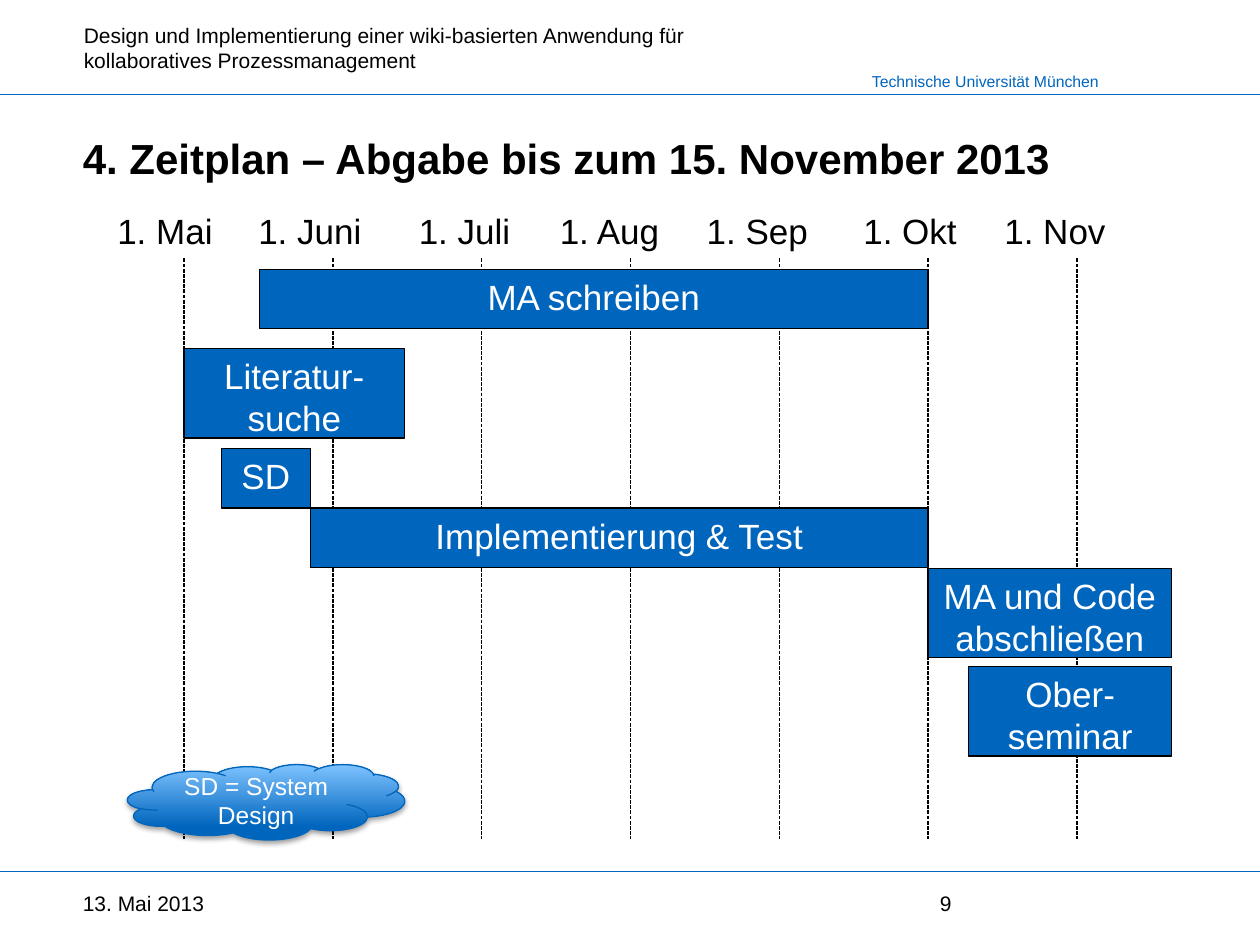
from lxml.etree import SubElement
from pptx import Presentation
from pptx.dml.color import RGBColor
from pptx.enum.dml import MSO_LINE
from pptx.enum.shapes import MSO_CONNECTOR as Connector, MSO_SHAPE as Shape
from pptx.enum.text import MSO_ANCHOR as Anchor, PP_ALIGN as Align
from pptx.oxml.ns import qn
from pptx.util import Cm, Pt

COLORS = {"blue": "0065BD", "light": "7FC3FF", "black": "000000", "white": "FFFFFF"}


def rgb(name):
    return RGBColor.from_string(COLORS[name])


class SlideBuilder:
    font_name = "Arial"
    line_width = Pt(0.75)

    def __init__(self, slide):
        self.slide = slide

    def set_text(self, box, text, size, color, align, anchor, bold=False, wrap=True):
        frame = box.text_frame
        frame.word_wrap = wrap
        frame.vertical_anchor = anchor
        para = frame.paragraphs[0]
        para.text = text
        para.alignment = align
        font = para.font
        font.name, font.size, font.bold = self.font_name, Pt(size), bold
        font.color.rgb = rgb(color)

    def text(self, text, left, top, width, height, size=12, color="black",
             align=Align.LEFT, anchor=Anchor.TOP, bold=False, wrap=True):
        box = self.slide.shapes.add_textbox(Cm(left), Cm(top), Cm(width), Cm(height))
        self.set_text(box, text, size, color, align, anchor, bold, wrap)

    def line(self, x1, y1, x2, y2, color, dash=None):
        line = self.slide.shapes.add_connector(
            Connector.STRAIGHT, Cm(x1), Cm(y1), Cm(x2), Cm(y2))
        line.line.color.rgb = rgb(color)
        line.line.width = self.line_width
        if dash:
            line.line.dash_style = dash
        SubElement(line._element.spPr, qn("a:effectLst"))

    def shape(self, kind, left, top, width, height, border):
        shape = self.slide.shapes.add_shape(
            kind, Cm(left), Cm(top), Cm(width), Cm(height))
        shape.shadow.inherit = False
        shape.line.color.rgb = rgb(border)
        shape.line.width = self.line_width
        return shape

    def bar(self, text, start, end, top, height):
        bar = self.shape(Shape.RECTANGLE, start, top, end - start, height, "black")
        bar.fill.solid()
        bar.fill.fore_color.rgb = rgb("blue")
        self.set_text(bar, text, 20, "white", Align.CENTER, Anchor.TOP)

    def cloud(self, text, left, top, width, height):
        cloud = self.shape(Shape.CLOUD, left, top, width, height, "blue")
        cloud.fill.gradient()
        cloud.fill.gradient_angle = 90
        stops = zip(cloud.fill.gradient_stops, ("blue", "light"), (0.17, 1))
        for stop, color, position in stops:
            stop.color.rgb = rgb(color)
            stop.position = position
        # Soft shadow straight below
        effects = cloud._element.spPr.find(qn("a:effectLst"))
        shadow = SubElement(effects, qn("a:outerShdw"), blurRad=str(Pt(3.1)),
                            dist=str(Pt(1.6)), dir="5400000", rotWithShape="0")
        shade = SubElement(shadow, qn("a:srgbClr"), val=COLORS["black"])
        SubElement(shade, qn("a:alpha"), val="38000")
        self.set_text(cloud, text, 14, "white", Align.CENTER, Anchor.MIDDLE)


def main():
    deck = Presentation()
    deck.slide_width, deck.slide_height = Cm(25.4), Cm(19.05)
    page = SlideBuilder(deck.slides.add_slide(deck.slide_layouts[6]))

    # Header and footer
    page.text("Technische Universität München", 17.3, 1.32, 5.1, 0.64,
              size=9, color="blue", align=Align.RIGHT, wrap=False)
    for y in (1.9, 17.57):
        page.line(0, y, 25.4, y, "blue")
    page.text("Design und Implementierung einer wiki-basierten Anwendung für "
              "kollaboratives Prozessmanagement", 1.44, 0.33, 14.94, 1.27)
    for text, left in (("13. Mai 2013", 1.42), ("9", 18.7)):
        page.text(text, left, 17.78, 5.28, 0.84, anchor=Anchor.MIDDLE)

    # Title
    page.text("4. Zeitplan – Abgabe bis zum 15. November 2013",
              1.42, 2.54, 22.58, 1.7, size=24, bold=True)

    # Month grid: label and its width
    first_month, month_step, label_overhang = 3.71, 3, 0.83
    months = [("1. Mai", 2.44), ("1. Juni", 2.62), ("1. Juli", 2.36),
              ("1. Aug", 2.54), ("1. Sep", 2.57), ("1. Okt", 2.41), ("1. Nov", 2.57)]
    for index, (label, width) in enumerate(months):
        x = first_month + index * month_step
        page.line(x, 5.21, x, 16.92, "black", MSO_LINE.SQUARE_DOT)
        page.text(label, x + label_overhang - width, 4.09, width, 1.12,
                  size=20, align=Align.RIGHT, wrap=False)

    # Task bars: text, start, end, top, height
    october = first_month + 5 * month_step
    low, high = 1.2, 1.8
    tasks = [
        ("MA schreiben", 5.23, october, 5.43, low),
        ("Literatur-suche", first_month, 8.16, 7.03, high),
        ("SD", 4.46, 6.26, 9.04, low),
        ("Implementierung & Test", 6.26, october, 10.24, low),
        ("MA und Code abschließen", october, 23.62, 11.46, high),
        ("Ober-seminar", 19.53, 23.62, 13.44, high),
    ]
    for task in tasks:
        page.bar(*task)

    # Abbreviation note
    page.cloud("SD = System Design", 2.57, 15.41, 5.59, 1.52)

    deck.save("out.pptx")


if __name__ == "__main__":
    main()
